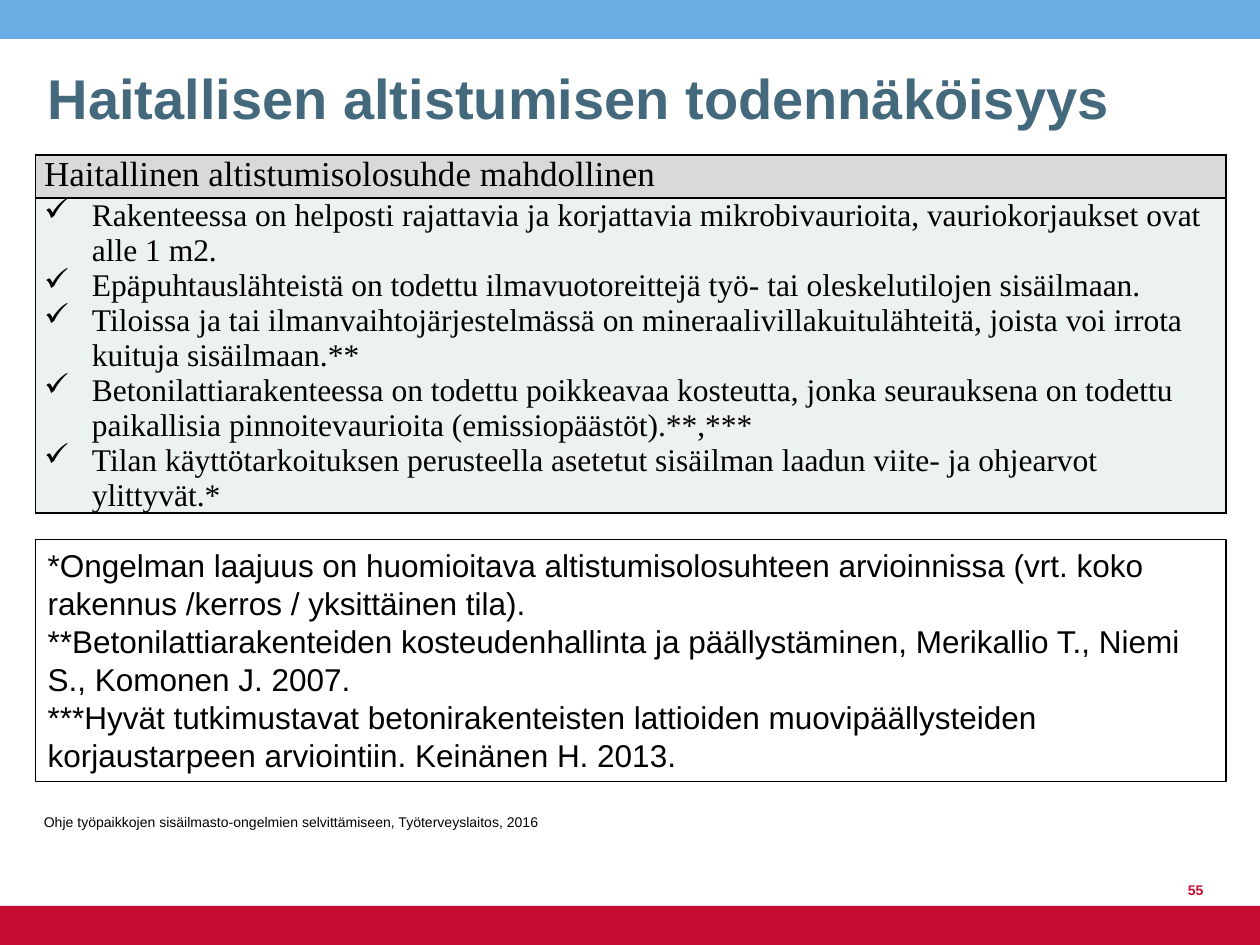
from pptx import Presentation
from pptx.dml.color import RGBColor
from pptx.enum.shapes import MSO_SHAPE
from pptx.enum.text import MSO_ANCHOR, PP_ALIGN
from pptx.oxml import parse_xml
from pptx.oxml.ns import nsdecls
from pptx.util import Inches, Pt

HUES = {"sky": "6AADE4", "red": "C60C30", "slate": "44697D", "ink": "000000",
        "grey": "D9D9D9", "mint": "EBF2EF"}
COLS, ROWS = 100, 75

TITLE = "Haitallisen altistumisen todennäköisyys"
HEAD = "Haitallinen altistumisolosuhde mahdollinen"
SIGNS = [
    "Rakenteessa on helposti rajattavia ja korjattavia mikrobivaurioita, vauriokorjaukset ovat alle 1 m2.",
    "Epäpuhtauslähteistä on todettu ilmavuotoreittejä työ- tai oleskelutilojen sisäilmaan.",
    "Tiloissa ja tai ilmanvaihtojärjestelmässä on mineraalivillakuitulähteitä, joista voi irrota kuituja sisäilmaan.**",
    "Betonilattiarakenteessa on todettu poikkeavaa kosteutta, jonka seurauksena on todettu paikallisia pinnoitevaurioita (emissiopäästöt).**,***",
    "Tilan käyttötarkoituksen perusteella asetetut sisäilman laadun viite- ja ohjearvot ylittyvät.*",
]
NOTES = [
    "*Ongelman laajuus on huomioitava altistumisolosuhteen arvioinnissa (vrt. koko rakennus /kerros / yksittäinen tila).",
    "**Betonilattiarakenteiden kosteudenhallinta ja päällystäminen, Merikallio T., Niemi S., Komonen J. 2007.",
    "***Hyvät tutkimustavat betonirakenteisten lattioiden muovipäällysteiden korjaustarpeen arviointiin. Keinänen H. 2013.",
]
SOURCE = "Ohje työpaikkojen sisäilmasto-ongelmien selvittämiseen, Työterveyslaitos, 2016"


def tint(name):
    return RGBColor.from_string(HUES[name])


class Page:
    def __init__(self, deck):
        self.slide = deck.slides.add_slide(deck.slide_layouts[5])
        self.shapes = self.slide.shapes
        self.wide, self.high = deck.slide_width, deck.slide_height

    def area(self, x, y, w, h):
        """Turn grid columns and rows into slide lengths."""
        dx, dy = self.wide / COLS, self.high / ROWS
        return [round(n) for n in (x * dx, y * dy, w * dx, h * dy)]

    def text(self, frame, lines, hue="ink", mark=None, align=PP_ALIGN.LEFT,
             pitch=None, **font):
        font = {"name": "Arial", "size": Pt(18), "bold": False, **font}
        frame.word_wrap = True
        for i, line in enumerate(lines):
            para = frame.add_paragraph() if i else frame.paragraphs[0]
            if mark:
                self.bullet(para, mark)
            para.alignment = align
            if pitch:
                para.line_spacing = Pt(pitch)
            run = para.add_run()
            run.text = line
            for key, value in font.items():
                setattr(run.font, key, value)
            run.font.color.rgb = tint(hue)

    def bullet(self, para, mark):
        props = para._p.get_or_add_pPr()
        props.set("marL", str(Inches(0.38)))
        props.set("indent", str(-Inches(0.38)))
        props.append(parse_xml(f'<a:buChar {nsdecls("a")} char="{mark}"/>'))

    def title(self, text, *spot):
        box = self.shapes.title
        box.left, box.top, box.width, box.height = self.area(*spot)
        box.text_frame.vertical_anchor = MSO_ANCHOR.BOTTOM
        self.text(box.text_frame, [text], "slate", size=Pt(32), bold=True)

    def rect(self, *spot, fill=None, line=None):
        box = self.shapes.add_shape(MSO_SHAPE.RECTANGLE, *self.area(*spot))
        box.shadow.inherit = False
        for part, hue in ((box.fill, fill), (box.line.fill, line)):
            if hue:
                part.solid()
                part.fore_color.rgb = tint(hue)
            else:
                part.background()
        if line:
            box.line.width = Pt(0.75)
        return box

    def panel(self, lines, *spot, **style):
        box = self.rect(*spot, line="ink")
        box.text_frame.vertical_anchor = MSO_ANCHOR.TOP
        self.text(box.text_frame, lines, **style)

    def label(self, text, *spot, foot=0.05, **style):
        frame = self.shapes.add_textbox(*self.area(*spot)).text_frame
        frame.vertical_anchor = MSO_ANCHOR.BOTTOM
        frame.margin_bottom = Inches(foot)
        self.text(frame, [text], size=Pt(8), **style)

    def edge(self, cell):
        props = cell._tc.get_or_add_tcPr()
        for side in "LRTB":
            props.append(parse_xml(
                f'<a:ln{side} {nsdecls("a")} w="{Pt(1)}"><a:solidFill>'
                f'<a:srgbClr val="{HUES["ink"]}"/></a:solidFill></a:ln{side}>'))

    def table(self, rows, *spot):
        """Draw one column of (height, fill, lines, style) rows."""
        grid = self.shapes.add_table(len(rows), 1, *self.area(*spot)).table
        grid.first_row = grid.horz_banding = False
        for i, (high, fill, lines, style) in enumerate(rows):
            grid.rows[i].height = self.area(0, 0, 0, high)[3]
            cell = grid.cell(i, 0)
            self.edge(cell)
            cell.fill.solid()
            cell.fill.fore_color.rgb = tint(fill)
            cell.margin_left = cell.margin_right = Inches(0.07)
            cell.margin_top = cell.margin_bottom = 0
            self.text(cell.text_frame, lines, name="Times New Roman", **style)


def main():
    deck = Presentation()
    deck.slide_width, deck.slide_height = Inches(10), Inches(7.5)
    page = Page(deck)
    band = 3.1
    page.rect(0, 0, COLS, band, fill="sky")
    page.rect(0, ROWS - band, COLS, band, fill="red")
    page.title(TITLE, 2.8, 2.9, 92.9, 8)
    left, wide = 2.8, 94.5
    page.table([(3.4, "grey", [HEAD], {"size": Pt(20)}),
                (25, "mint", SIGNS, {"mark": "✓", "pitch": 20})],
               left, 12.3, wide, 28.4)
    page.label("55", 91, 67.8, 5.5, 4, hue="red", bold=True, align=PP_ALIGN.RIGHT)
    page.label(SOURCE, 2.5, 65.1, 78, 3.9, foot=0.31)
    page.panel(NOTES, left, 42.8, wide, 19.2, pitch=21.7)
    deck.save("out.pptx")


if __name__ == "__main__":
    main()
